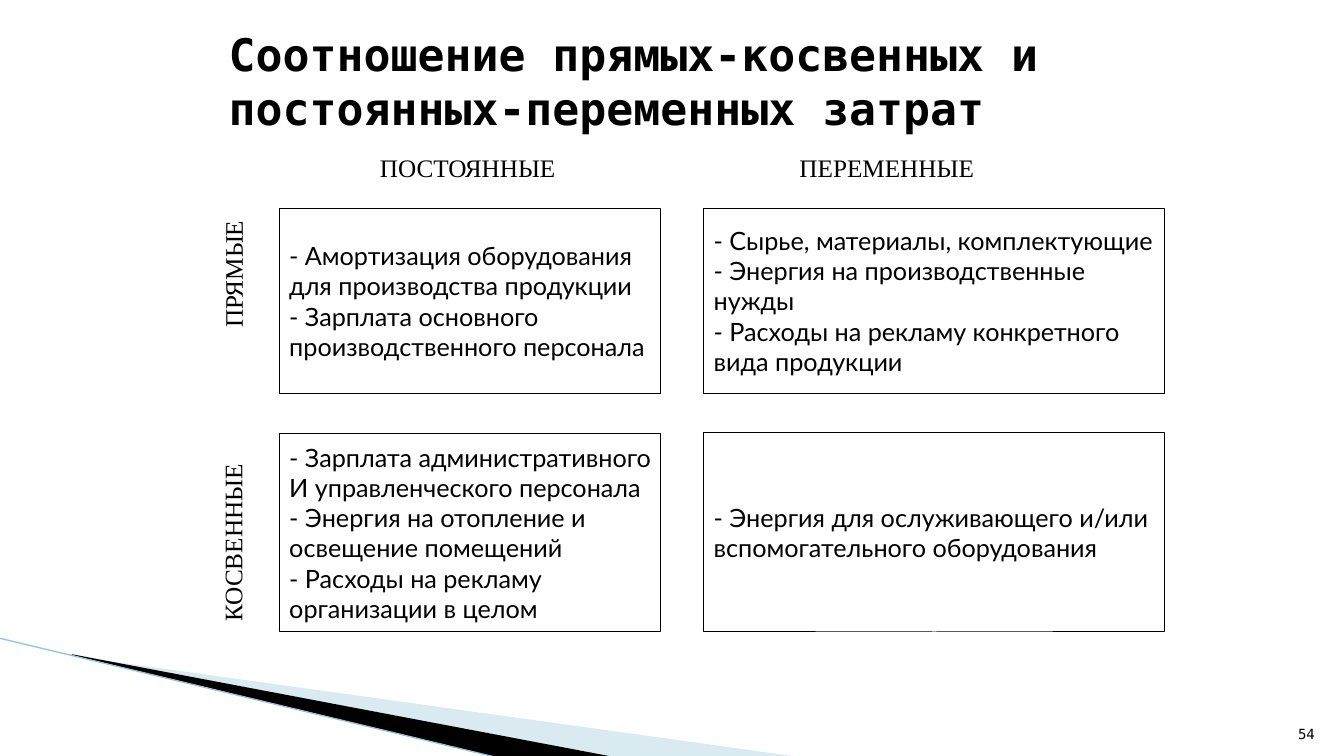
import pptx
import pptx.dml.color
import pptx.enum.shapes
import pptx.enum.text
import pptx.oxml
import pptx.util
from lxml import etree

Inches = pptx.util.Inches
ALIGN = pptx.enum.text.PP_ALIGN
ANCHOR = pptx.enum.text.MSO_ANCHOR
GROW = pptx.enum.text.MSO_AUTO_SIZE.SHAPE_TO_FIT_TEXT
DRAWING = "{http://schemas.openxmlformats.org/drawingml/2006/main}"

TITLE_FONT = {"name": "DejaVu Sans Mono", "size": pptx.util.Pt(32), "bold": True}
NUMBER_FONT = {"name": "DejaVu Sans Mono", "size": pptx.util.Pt(10)}
LABEL_FONT = {"name": "Times New Roman", "size": pptx.util.Pt(18)}
COST_FONT = {"name": "Lato", "size": pptx.util.Pt(18)}

COST_CELLS = [
    ((2.77, 2.07, 3.78, 1.83), [
        "- Амортизация оборудования",
        "для производства продукции",
        "- Зарплата основного",
        "производственного персонала"]),
    ((6.98, 2.07, 4.57, 1.83), [
        "- Сырье, материалы, комплектующие",
        "- Энергия на производственные",
        "нужды",
        "- Расходы на рекламу конкретного",
        "вида продукции"]),
    ((2.77, 4.3, 3.78, 1.97), [
        "- Зарплата административного",
        "И управленческого персонала",
        "- Энергия на отопление и",
        "освещение помещений",
        "- Расходы на рекламу",
        "организации в целом"]),
    ((6.98, 4.29, 4.57, 1.98), [
        "- Энергия для ослуживающего и/или",
        "вспомогательного оборудования"]),
]

AXIS_LABELS = [
    ("ПОСТОЯННЫЕ", (3.67, 1.46, 1.96, 0.4), 0, ALIGN.LEFT, False),
    ("ПЕРЕМЕННЫЕ", (7.77, 1.46, 2.05, 0.4), 0, ALIGN.CENTER, True),
    ("ПРЯМЫЕ", (1.67, 2.51, 1.28, 0.4), 270, ALIGN.LEFT, False),
    ("КОСВЕННЫЕ", (1.36, 5.12, 1.89, 0.4), 270, ALIGN.LEFT, True),
]


def color(value):
    return pptx.dml.color.RGBColor.from_string(value)


def paint(part, value):
    part.fill.solid()
    part.fill.fore_color.rgb = color(value)


def write(part, lines, font, align=ALIGN.LEFT, **frame):
    for key, value in frame.items():
        setattr(part.text_frame, key, value)
    part.text_frame.text = "\n".join(lines)
    for paragraph in part.text_frame.paragraphs:
        paragraph.alignment = align
        for key, value in font.items():
            setattr(paragraph.font, key, value)
        paragraph.font.color.rgb = color("000000")


def add_text(slide, box, text, font, **options):
    area = slide.shapes.add_textbox(*map(Inches, box))
    write(area, [text], font, **options)
    return area


def add_ribbon(slide, box, corners, fill, opacity=100):
    left, top = box
    points = [(Inches(left + x), Inches(top + y)) for x, y in corners]
    builder = slide.shapes.build_freeform(*points[0], scale=1.0)
    builder.add_line_segments(points[1:], close=True)
    ribbon = builder.convert_to_shape()
    ribbon.shadow.inherit = False
    ribbon.line.fill.background()
    paint(ribbon, fill)
    if opacity < 100:
        tint = ribbon.fill._xPr.find(f".//{DRAWING}srgbClr")
        etree.SubElement(tint, f"{DRAWING}alpha", val=str(opacity * 1000))


def add_corner_decoration(slide, box):
    left, top, width, height = box
    add_ribbon(slide, (left + 0.74, top + 0.17),
               [(0, 0.01), (7.2, 1.01), (5.35, 1.01), (0, 0)], "A0CBDC", 40)
    add_ribbon(slide, (left + 0.72, top + 0.16),
               [(0, 0), (5.38, 1.02), (4.25, 1.03), (0.01, 0.01)], "000000")
    edge = slide.shapes.add_connector(
        pptx.enum.shapes.MSO_CONNECTOR.STRAIGHT,
        *map(Inches, (left, top, left + width, top + height)))
    edge.line.color.rgb = color("97C5D8")
    edge.line.width = pptx.util.Pt(0.95)
    etree.SubElement(edge._element.spPr, f"{DRAWING}effectLst")


def add_cost_cell(slide, box, costs):
    cell = slide.shapes.add_shape(
        pptx.enum.shapes.MSO_SHAPE.RECTANGLE, *map(Inches, box))
    cell.shadow.inherit = False
    paint(cell, "FFFFFF")
    cell.line.color.rgb = color("000000")
    cell.line.width = pptx.util.Pt(0.75)
    write(cell, costs, COST_FONT, word_wrap=False, vertical_anchor=ANCHOR.MIDDLE)


def add_axis_label(slide, box, text, rotation, align, wrap):
    label = add_text(slide, box, text, LABEL_FONT, align=align,
                     word_wrap=wrap, auto_size=GROW)
    label.rotation = rotation


def main():
    deck = pptx.Presentation()
    deck.slide_width, deck.slide_height = Inches(13.33), Inches(7.5)
    slide = deck.slides.add_slide(deck.slide_layouts[6])
    add_corner_decoration(slide, (-0.01, 6.33, 4.96, 1.19))
    add_text(slide, (12.61, 7.01, 0.53, 0.4), "54", NUMBER_FONT,
             align=ALIGN.RIGHT, word_wrap=True, vertical_anchor=ANCHOR.BOTTOM)
    add_text(slide, (2.17, 0.21, 9.15, 1.18),
             "Соотношение прямых-косвенных и постоянных-переменных затрат",
             TITLE_FONT, word_wrap=True, vertical_anchor=ANCHOR.MIDDLE)
    for box, costs in COST_CELLS:
        add_cost_cell(slide, box, costs)
    for text, box, rotation, align, wrap in AXIS_LABELS:
        add_axis_label(slide, box, text, rotation, align, wrap)
    deck.save("out.pptx")


if __name__ == "__main__":
    main()
